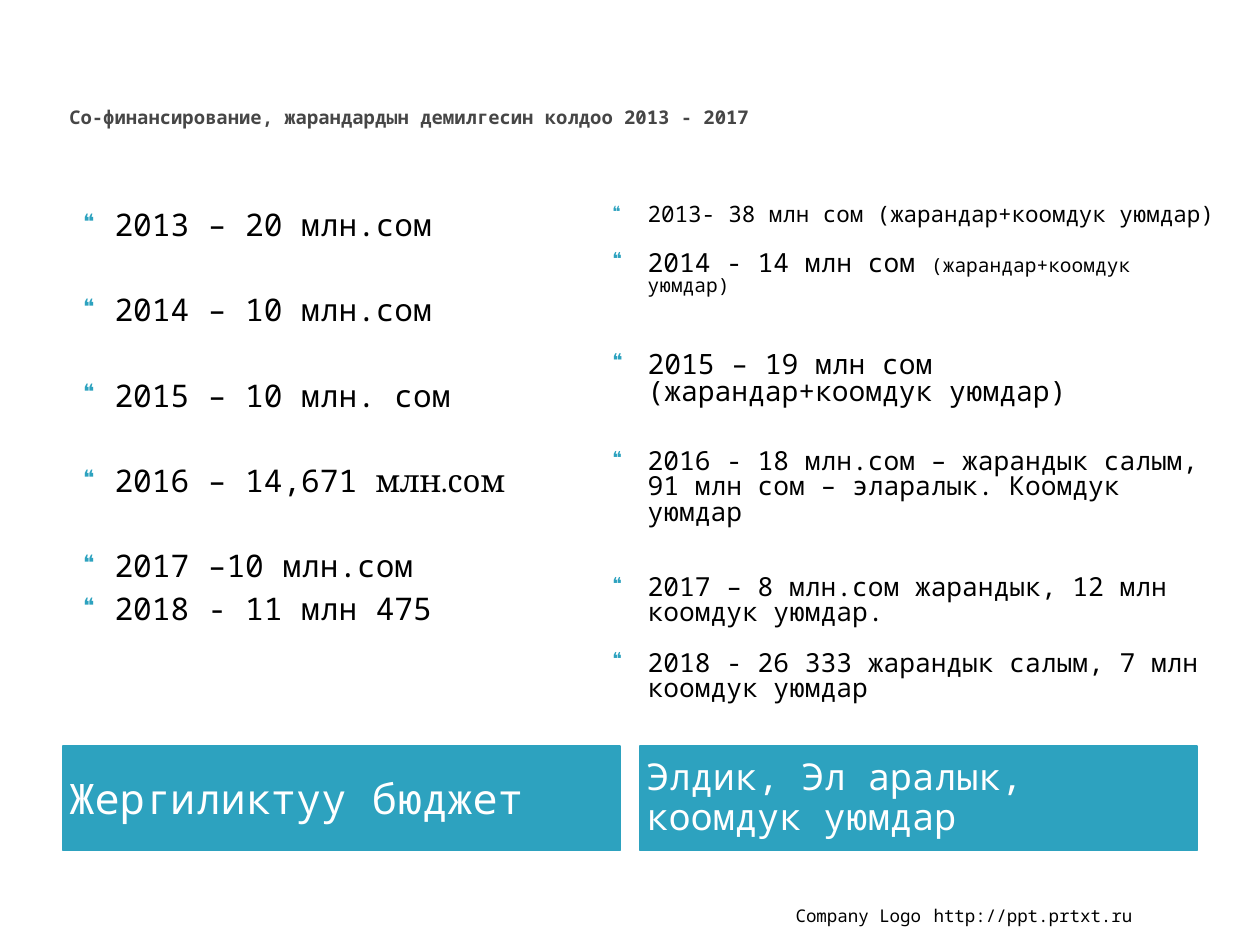
from lxml.etree import SubElement
from pptx import Presentation
from pptx.dml.color import RGBColor
from pptx.enum.shapes import MSO_SHAPE
from pptx.enum.text import MSO_ANCHOR, PP_ALIGN
from pptx.oxml.ns import qn
from pptx.util import Inches, Pt

COLORS = {"accent": "2DA2BF", "title": "464646", "text": "000000", "light": "FFFFFF"}
MONO = "Noto Sans Mono"
SERIF = "Cambria"

LOCAL_BUDGET = [
    (0, [("2013 – 20 млн.сом", 17.8, MONO)]),
    (27.4, [("2014 – 10 млн.сом", 17.8, MONO)]),
    (27.4, [("2015 – 10 млн. сом", 17.8, MONO)]),
    (27.4, [("2016 – 14,671 ", 17.8, MONO), ("млн.сом", 17.8, SERIF)]),
    (27.4, [("2017 –10 млн.сом", 17.8, MONO)]),
    (3, [("2018 - 11 млн 475", 17.8, MONO)]),
]
PUBLIC_FUNDS = [
    (0, [("2013- 38 млн сом (жарандар+коомдук уюмдар)", 12.9, MONO)]),
    (14.4, [("2014 - 14 млн сом ", 15, MONO), ("(жарандар+коомдук уюмдар)", 11.1, MONO)]),
    (32.6, [("2015 – 19 млн сом (жарандар+коомдук уюмдар)", 16, MONO)]),
    (25, [("2016 - 18 млн.сом – жарандык салым, 91 млн сом – эларалык. Коомдук уюмдар", 15, MONO)]),
    (28.8, [("2017 – 8 млн.сом жарандык, 12 млн коомдук уюмдар.", 15, MONO)]),
    (14.4, [("2018 - 26 333 жарандык салым, 7 млн коомдук уюмдар", 15, MONO)]),
]


def color(key):
    """Return the palette colour for a key."""
    return RGBColor.from_string(COLORS[key])


def style_font(font, size, key, name=MONO, bold=False):
    """Set typeface, size, colour and weight."""
    font.name, font.size, font.bold = name, Pt(size), bold
    font.color.rgb = color(key)


def prepare_frame(frame, anchor):
    """Apply the common insets, wrapping and anchor."""
    frame.word_wrap = True
    frame.vertical_anchor = anchor
    frame.margin_left = frame.margin_right = Inches(0.05)
    frame.margin_top = frame.margin_bottom = Inches(0.05)
    return frame


def add_frame(slide, place, anchor):
    """Add a text box and return its frame."""
    textbox = slide.shapes.add_textbox(*map(Inches, place))
    return prepare_frame(textbox.text_frame, anchor)


def write_line(frame, text, size, key, bold=False, align=PP_ALIGN.LEFT):
    """Fill a frame with one styled paragraph."""
    frame.text = text
    paragraph = frame.paragraphs[0]
    paragraph.alignment = align
    style_font(paragraph.runs[0].font, size, key, bold=bold)
    return paragraph


def add_label(slide, place, text, size, key, anchor, **style):
    """Add a single-paragraph text box."""
    write_line(add_frame(slide, place, anchor), text, size, key, **style)


def add_caption(slide, left, text, size, line_spacing):
    """Add a coloured column caption."""
    caption = slide.shapes.add_shape(
        MSO_SHAPE.RECTANGLE, Inches(left), Inches(5.92), Inches(4.42), Inches(0.83))
    caption.shadow.inherit = False
    caption.fill.solid()
    caption.fill.fore_color.rgb = color("accent")
    caption.line.color.rgb = color("accent")
    caption.line.width = Pt(0.75)
    frame = prepare_frame(caption.text_frame, MSO_ANCHOR.MIDDLE)
    write_line(frame, text, size, "light").line_spacing = line_spacing


def add_bullet(paragraph, margin, hanging):
    """Give a paragraph a quote-mark bullet and hanging indent."""
    properties = paragraph._p.get_or_add_pPr()
    properties.set("marL", str(Inches(margin)))
    properties.set("indent", str(-Inches(hanging)))
    bullet_color = SubElement(properties, qn("a:buClr"))
    SubElement(bullet_color, qn("a:srgbClr"), val=COLORS["accent"])
    SubElement(properties, qn("a:buSzPct"), val="68000")
    SubElement(properties, qn("a:buChar"), char="❝")


def add_year_list(slide, place, entries, margin, hanging, line_spacing):
    """Add a bulleted list of yearly amounts."""
    frame = add_frame(slide, place, MSO_ANCHOR.TOP)
    for index, (gap, parts) in enumerate(entries):
        paragraph = frame.add_paragraph() if index else frame.paragraphs[0]
        add_bullet(paragraph, margin, hanging)
        paragraph.line_spacing = line_spacing
        paragraph.space_before = Pt(gap)
        for text, size, name in parts:
            run = paragraph.add_run()
            run.text = text
            style_font(run.font, size, "text", name)


def main():
    """Build and save the co-financing slide."""
    presentation = Presentation()
    presentation.slide_width, presentation.slide_height = Inches(10), Inches(7.5)
    slide = presentation.slides.add_slide(presentation.slide_layouts[6])

    add_label(slide, (0.5, 0.3, 9, 1.25),
              "Со-финансирование, жарандардын демилгесин колдоо 2013 - 2017",
              10.8, "title", MSO_ANCHOR.MIDDLE, bold=True)
    add_caption(slide, 0.5, "Жергиликтуу бюджет", 24, 1.0)
    add_caption(slide, 5.08, "Элдик, Эл аралык, коомдук уюмдар", 21.1, 0.9)
    add_year_list(slide, (0.5, 1.58, 3.95, 4.31), LOCAL_BUDGET, 0.36, 0.25, 1.0)
    add_year_list(slide, (4.69, 1.58, 5.04, 4.31), PUBLIC_FUNDS, 0.4, 0.28, 0.8)
    add_label(slide, (4.79, 7.13, 2.57, 0.27), "Company Logo", 10, "text",
              MSO_ANCHOR.BOTTOM, align=PP_ALIGN.RIGHT)
    add_label(slide, (7.36, 7.13, 2.1, 0.27), "http://ppt.prtxt.ru", 10, "text",
              MSO_ANCHOR.BOTTOM)
    presentation.save("out.pptx")


if __name__ == "__main__":
    main()
